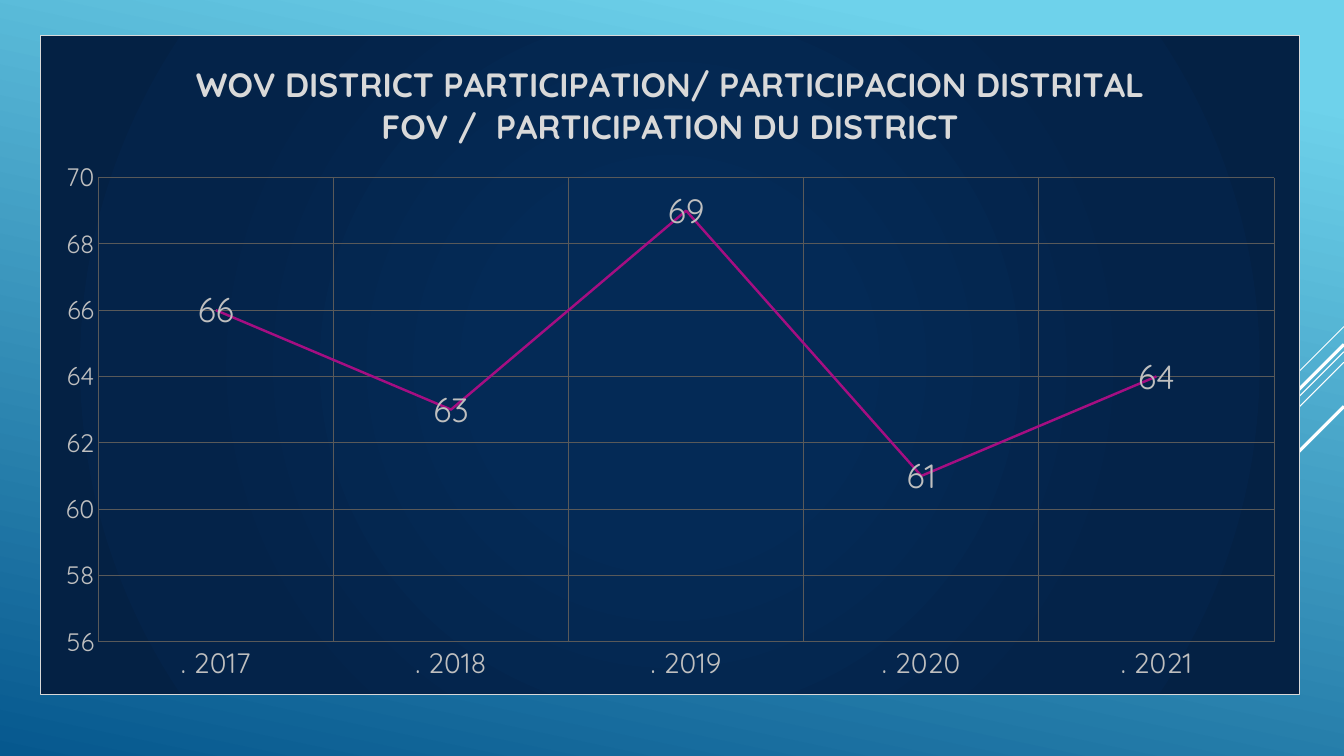
from dataclasses import dataclass

from lxml.etree import SubElement as sub
from pptx import Presentation
from pptx.chart.data import CategoryChartData as Data
from pptx.dml.color import RGBColor as Rgb
from pptx.enum.chart import XL_CHART_TYPE as Kind
from pptx.enum.chart import XL_LABEL_POSITION as Spot
from pptx.enum.chart import XL_TICK_MARK as Tick
from pptx.enum.shapes import MSO_CONNECTOR as Link
from pptx.oxml import parse_xml as parse
from pptx.oxml.ns import nsdecls, qn
from pptx.util import Pt

SCALE = 9525
WIDE, HIGH = 1280, 720


@dataclass(frozen=True)
class Theme:
    face: str = "Quicksand"
    white: str = "FFFFFF"
    soft: str = "BFBFBF"
    pale: str = "D9D9D9"
    grid: str = "595959"
    trend: str = "A50E82"
    sky: tuple = ((10, "6ED2EB"), (100, "06588E"))
    navy: tuple = ((0, "042A56"), (23, "042A56"), (69, "042349"), (97, "042144"))
    base: int = 10
    scale: int = 18
    year: int = 20
    head: int = 24


@dataclass(frozen=True)
class Ray:
    top: int
    span: int
    weight: float


@dataclass(frozen=True)
class Box:
    left: int
    top: int
    width: int
    height: int


THEME = Theme()
RAYS = (
    Ray(311, 96, 0.75),
    Ray(335, 313, 0.75),
    Ray(345, 199, 0.75),
    Ray(328, 184, 2.25),
    Ray(387, 134, 2.25),
)
PANEL = Box(38, 33, 1200, 629)
PLOT = Box(55, 136, 1121, 443)
TITLE = "WOV DISTRICT PARTICIPATION/ PARTICIPACION DISTRITAL FOV /  PARTICIPATION DU DISTRICT"
COUNTS = {2017: 66, 2018: 63, 2019: 69, 2020: 61, 2021: 64}


def px(size: int) -> int:
    return size * SCALE


def style(font, size: int, color: str, bold: bool = False) -> None:
    font.name = THEME.face
    font.size = Pt(size)
    font.bold = bold
    font.color.rgb = Rgb.from_string(color)


def write(frame, text: str, **form) -> None:
    run = frame.paragraphs[0].add_run()
    run.text = text
    style(run.font, **form)


def stroke(line, color: str, weight: float) -> None:
    line.color.rgb = Rgb.from_string(color)
    line.width = Pt(weight)


def paint_sky(slide) -> None:
    fill = slide.background.fill
    fill.gradient()
    fill.gradient_angle = 258
    for stop, (place, color) in zip(fill.gradient_stops, THEME.sky):
        stop.position = place / 100
        stop.color.rgb = Rgb.from_string(color)


def draw_ray(slide, ray: Ray) -> None:
    ends = (WIDE, ray.top, WIDE - ray.span, ray.top + ray.span)
    line = slide.shapes.add_connector(Link.STRAIGHT, *map(px, ends))
    stroke(line.line, THEME.white, ray.weight)
    sub(line.element.spPr, qn("a:effectLst"))


def style_axis(axis, size: int) -> None:
    axis.major_tick_mark = axis.minor_tick_mark = Tick.NONE
    axis.format.line.fill.background()
    axis.has_major_gridlines = True
    stroke(axis.major_gridlines.format.line, THEME.grid, 0.75)
    style(axis.tick_labels.font, size, THEME.soft)


def place_plot(root) -> None:
    area = root.find(".//" + qn("c:plotArea"))
    for old in area.findall(qn("c:layout")):
        area.remove(old)
    layout = parse(f"<c:layout {nsdecls('c')}/>")
    manual = sub(layout, qn("c:manualLayout"))
    marks = {
        "layoutTarget": "inner",
        "xMode": "edge",
        "yMode": "edge",
        "x": round(PLOT.left / PANEL.width, 3),
        "y": round(PLOT.top / PANEL.height, 3),
        "w": round(PLOT.width / PANEL.width, 3),
        "h": round(PLOT.height / PANEL.height, 3),
    }
    for name, value in marks.items():
        sub(manual, qn(f"c:{name}")).set("val", str(value))
    area.insert(0, layout)


def paint_panel(root) -> None:
    stops = "".join(
        f'<a:gs pos="{place * 1000}"><a:srgbClr val="{color}"/></a:gs>'
        for place, color in THEME.navy
    )
    look = parse(
        f"<c:spPr {nsdecls('c', 'a')}><a:gradFill><a:gsLst>{stops}</a:gsLst>"
        '<a:path path="circle"><a:fillToRect l="50000" t="50000" r="50000" b="50000"/>'
        f'</a:path></a:gradFill><a:ln w="{Pt(0.75)}"><a:solidFill>'
        f'<a:srgbClr val="{THEME.pale}"/></a:solidFill></a:ln></c:spPr>'
    )
    root.find(qn("c:chart")).addnext(look)


def split_years(node) -> None:
    for old in node.findall(qn("c:crossBetween")):
        node.remove(old)
    cross = parse(f'<c:crossBetween {nsdecls("c")} val="between"/>')
    node.find(qn("c:crosses")).addnext(cross)


def draw_chart(slide) -> None:
    data = Data()
    data.categories = [f". {year}" for year in COUNTS]
    data.add_series("Series 1", COUNTS.values())
    spots = map(px, (PANEL.left, PANEL.top, PANEL.width, PANEL.height))
    chart = slide.shapes.add_chart(Kind.LINE_STACKED, *spots, data).chart
    style(chart.font, THEME.base, THEME.white)
    chart.has_legend = False
    chart.has_title = True
    write(chart.chart_title.text_frame, TITLE, size=THEME.head, color=THEME.pale, bold=True)
    chart.chart_title.include_in_layout = False

    style_axis(chart.category_axis, THEME.year)
    values = chart.value_axis
    style_axis(values, THEME.scale)
    values.minimum_scale, values.maximum_scale, values.major_unit = 56, 70, 2

    plot = chart.plots[0]
    plot.vary_by_categories = False
    series = plot.series[0]
    series.smooth = False
    stroke(series.format.line, THEME.trend, 1.75)
    labels = series.data_labels
    labels.show_value = True
    labels.position = Spot.CENTER
    style(labels.font, THEME.head, THEME.soft)

    root = chart.element
    split_years(root.find(".//" + qn("c:valAx")))
    place_plot(root)
    paint_panel(root)


def main() -> None:
    deck = Presentation()
    deck.slide_width, deck.slide_height = px(WIDE), px(HIGH)
    slide = deck.slides.add_slide(deck.slide_layouts[6])
    paint_sky(slide)
    for ray in RAYS:
        draw_ray(slide, ray)
    draw_chart(slide)
    deck.save("out.pptx")


if __name__ == "__main__":
    main()
